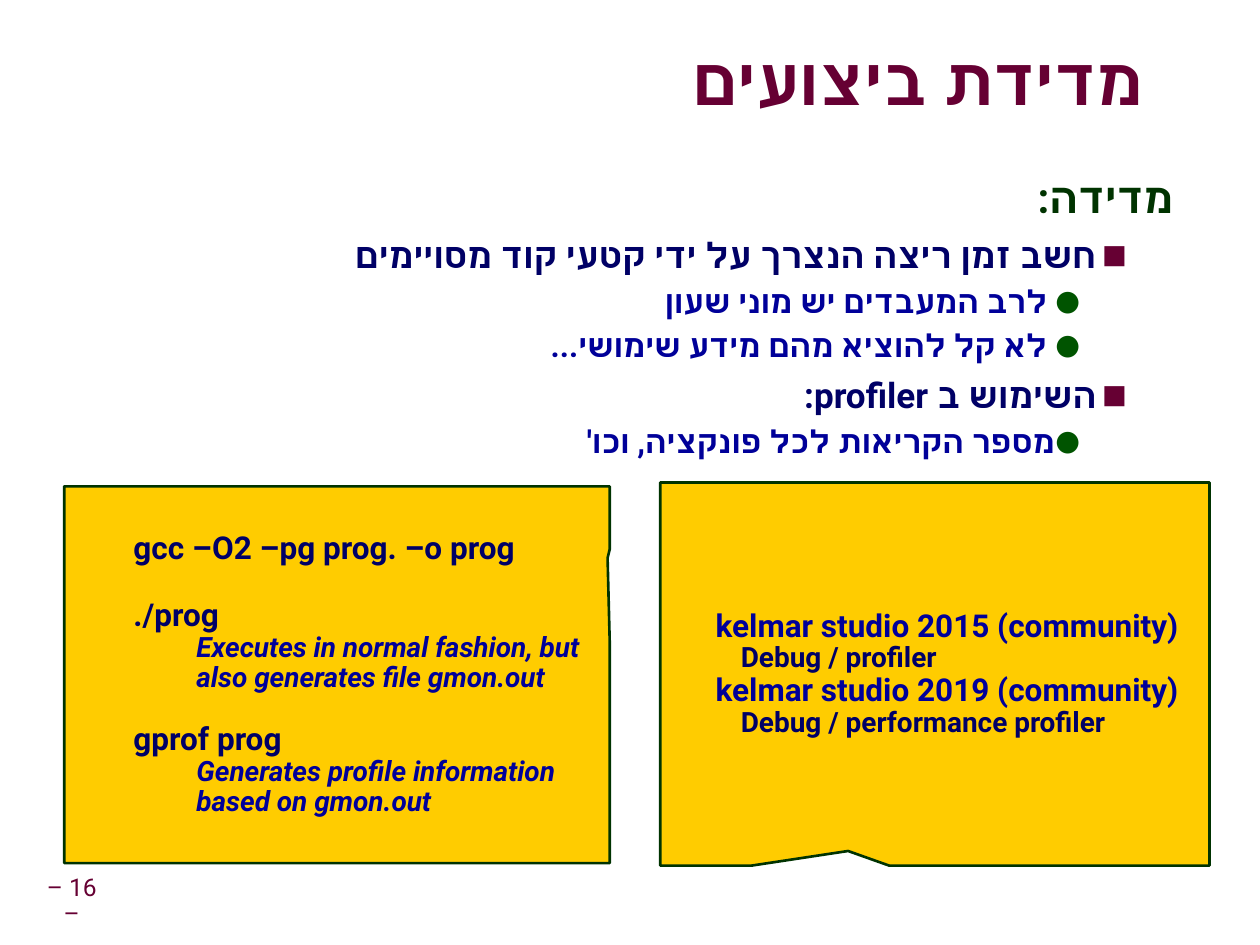
from lxml import etree
from pptx import Presentation
from pptx import util as u
from pptx.dml.color import RGBColor
from pptx.enum import shapes, text
from pptx.oxml.ns import qn

FONT = "Roboto"
MAROON, GREEN, NAVY, BLUE = "660033", "003300", "000066", "000099"
LEFT, CENTER, RIGHT = text.PP_ALIGN.LEFT, text.PP_ALIGN.CENTER, text.PP_ALIGN.RIGHT


def rgb(color):
    return RGBColor.from_string(color)


def add_text(p, words, size, color, bold=True, italic=False, align=LEFT,
             spacing=0.9, before=0, margin=0, hang=0):
    """Format paragraph p and add one run; right-aligned text runs right to left."""
    p.alignment, p.line_spacing, p.space_before = align, spacing, u.Pt(before)
    pPr = p._p.get_or_add_pPr()
    pPr.set("marL", str(u.Inches(margin)))
    pPr.set("indent", str(u.Inches(-hang)))
    if align == RIGHT:
        pPr.set("rtl", "1")
    r = p.add_run()
    r.text = words
    r.font.name, r.font.size = FONT, u.Pt(size)
    r.font.bold, r.font.italic = bold, italic
    r.font.color.rgb = rgb(color)
    etree.SubElement(r._r.rPr, qn("a:cs"), typeface=FONT)
    return r


prs = Presentation()
prs.slide_width, prs.slide_height = u.Inches(10), u.Inches(7.5)
s = prs.slides.add_slide(prs.slide_layouts[5])

# Title with a grey text shadow
title = s.shapes.title
title.left, title.top = u.Inches(2.68), u.Inches(0.36)
title.width, title.height = u.Inches(6.4), u.Inches(0.63)
tf = title.text_frame
tf.auto_size = text.MSO_AUTO_SIZE.NONE
tf.vertical_anchor = text.MSO_ANCHOR.MIDDLE
tf.margin_left = tf.margin_right = tf.margin_top = tf.margin_bottom = 0
r = add_text(tf.paragraphs[0], "מדידת ביצועים", 38, MAROON, align=RIGHT, spacing=0.87)
effects = etree.Element(qn("a:effectLst"))
shadow = etree.SubElement(effects, qn("a:outerShdw"), dist="38100", dir="2700000")
etree.SubElement(shadow, qn("a:srgbClr"), val="969696")
r._r.rPr.find(qn("a:solidFill")).addnext(effects)

# Outline: each level has its own size, colour, spacing, indent and bullet
levels = [
    dict(size=24, color=GREEN, spacing=0.95, margin=0.24, hang=0.24),
    dict(size=20, color=NAVY, spacing=1.0, before=6, margin=0.61, hang=0.24),
    dict(size=18, color=BLUE, spacing=1.07, before=2, margin=0.92, hang=0.18),
]
bullets = [None, ("■", MAROON, 75), ("●", "005400", 90)]
outline = [
    (0, "מדידה:"),
    (1, "חשב זמן ריצה הנצרך על ידי קטעי קוד מסויימים"),
    (2, " לרב המעבדים יש מוני שעון"),
    (2, " לא קל להוציא מהם מידע שימושי..."),
    (1, "השימוש ב profiler: "),
    (2, "מספר הקריאות לכל פונקציה, וכו'"),
]
body = s.shapes.add_textbox(u.Inches(0.32), u.Inches(1.34), u.Inches(9.09), u.Inches(2.4))
tf = body.text_frame
tf.word_wrap = True
for i, (level, words) in enumerate(outline):
    p = tf.add_paragraph() if i else tf.paragraphs[0]
    add_text(p, words, align=RIGHT, **levels[level])
    if bullets[level]:
        char, color, percent = bullets[level]
        pPr = p._p.pPr
        etree.SubElement(etree.SubElement(pPr, qn("a:buClr")), qn("a:srgbClr"), val=color)
        etree.SubElement(pPr, qn("a:buSzPct"), val=str(percent * 1000))
        etree.SubElement(pPr, qn("a:buFont"), typeface=FONT)
        etree.SubElement(pPr, qn("a:buChar"), char=char)

# Callouts: position, pointer tip, then (words, size, colour, italic, margin, space before)
callouts = [
    ((0.51, 3.86, 4.33, 2.99), (0.496, -0.31), [
        ("gcc –O2 –pg prog. –o prog", 18, NAVY, False, 0.5, 0),
        ("./prog", 18, NAVY, False, 0.5, 19),
        ("Executes in normal fashion, but also generates file gmon.out",
         16, BLUE, True, 1, 0),
        ("gprof prog", 18, NAVY, False, 0.5, 17),
        ("Generates profile information based on gmon.out", 16, BLUE, True, 1, 0),
    ]),
    ((5.24, 3.83, 4.36, 3.04), (-0.158, 0.462), [
        ("kelmar studio 2015 (community)", 18, BLUE, False, 0.39, 0),
        ("Debug / profiler", 16, NAVY, False, 0.59, 0),
        ("kelmar studio 2019 (community)", 18, BLUE, False, 0.39, 0),
        ("Debug / performance profiler", 16, NAVY, False, 0.59, 0),
    ]),
]
for box, tip, lines in callouts:
    sp = s.shapes.add_shape(shapes.MSO_SHAPE.RECTANGULAR_CALLOUT, *map(u.Inches, box))
    sp.adjustments[0], sp.adjustments[1] = tip
    sp.shadow.inherit = False
    sp.fill.solid()
    sp.fill.fore_color.rgb = rgb("FFCC00")
    sp.line.color.rgb = rgb(GREEN)
    sp.line.width = u.Pt(1.5)
    tf = sp.text_frame
    tf.word_wrap = True
    tf.vertical_anchor = text.MSO_ANCHOR.MIDDLE
    tf.margin_left = tf.margin_right = tf.margin_top = tf.margin_bottom = u.Inches(0.05)
    for i, (words, size, color, italic, margin, before) in enumerate(lines):
        p = tf.add_paragraph() if i else tf.paragraphs[0]
        add_text(p, words, size, color, italic=italic, margin=margin, before=before)

# Page number
number = s.shapes.add_textbox(u.Inches(0.24), u.Inches(7), u.Inches(0.66), u.Inches(0.31))
tf = number.text_frame
tf.word_wrap = True
tf.vertical_anchor = text.MSO_ANCHOR.MIDDLE
tf.margin_left = tf.margin_right = tf.margin_top = tf.margin_bottom = u.Inches(0.05)
add_text(tf.paragraphs[0], "– 16 –", 14, MAROON, bold=False, align=CENTER)

prs.save("out.pptx")
